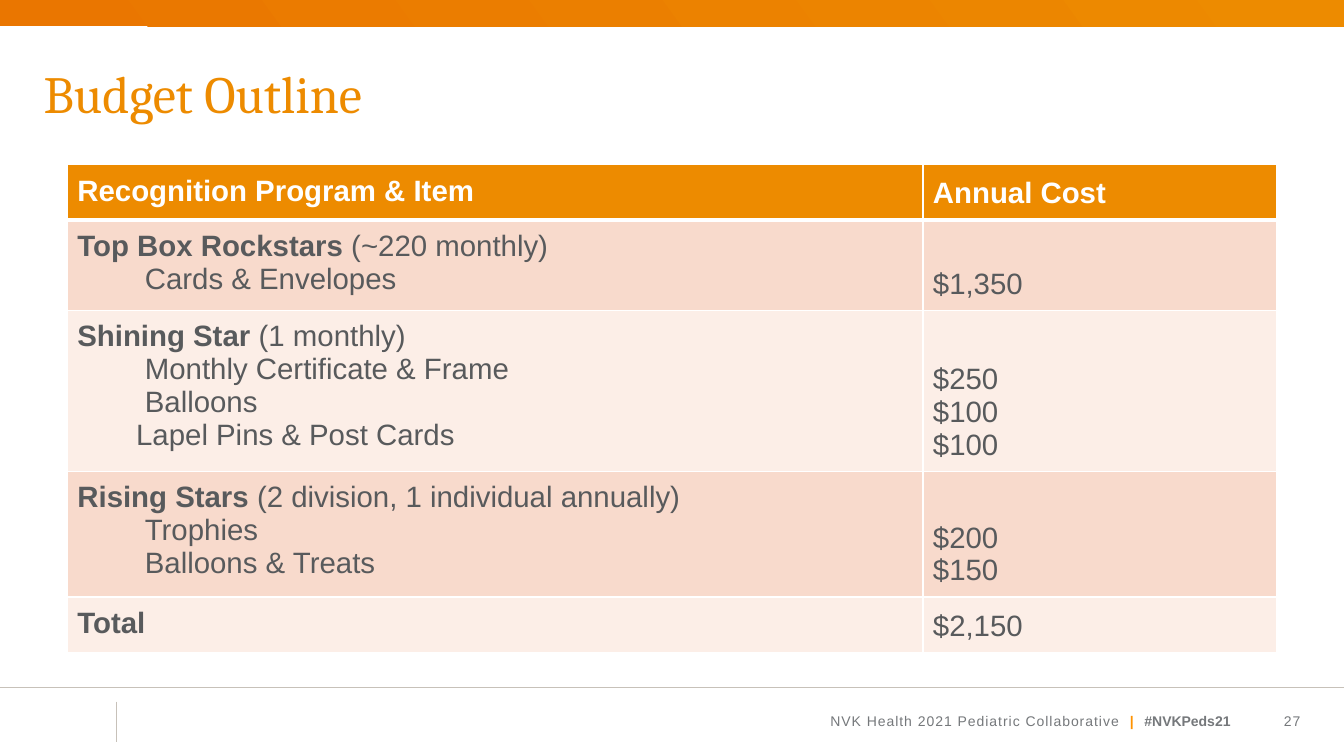
from pptx import Presentation
from pptx.dml.color import RGBColor
from pptx.enum.shapes import MSO_CONNECTOR as CONNECTOR, MSO_SHAPE as SHAPE
from pptx.enum.text import MSO_ANCHOR as ANCHOR, PP_ALIGN as ALIGN
from pptx.oxml.ns import qn
from pptx.util import Cm, Pt
from lxml.etree import SubElement

ORANGE = RGBColor(0xED, 0x8B, 0x00)
DEEP_ORANGE = RGBColor(0xEA, 0x76, 0x00)
BRIGHT_ORANGE = RGBColor(0xFF, 0x93, 0x00)
WHITE = RGBColor(0xFF, 0xFF, 0xFF)
DARK_GREY = RGBColor(0x58, 0x5A, 0x5C)
FOOTER_GREY = RGBColor(0x75, 0x78, 0x7B)
RULE_GREY = RGBColor(0xC7, 0xC1, 0xB9)
BANDS = (RGBColor(0xF8, 0xDA, 0xCC), RGBColor(0xFC, 0xEE, 0xE7))

TITLE = "Budget Outline"
HEADERS = ("Recognition Program & Item", "Annual Cost")
ITEM, PIN_ITEM = 1.7, 1.48
PROGRAMS = [
    ("Top Box Rockstars", " (~220 monthly)",
     [("Cards & Envelopes", "$1,350", ITEM)]),
    ("Shining Star ", "(1 monthly)",
     [("Monthly Certificate & Frame", "$250", ITEM),
      ("Balloons", "$100", ITEM),
      ("Lapel Pins & Post Cards", "$100", PIN_ITEM)]),
    ("Rising Stars ", "(2 division, 1 individual annually)",
     [("Trophies", "$200", ITEM),
      ("Balloons & Treats", "$150", ITEM)]),
]
TOTAL = ("Total", "$2,150")
FOOTER = [
    ("NVK Health 2021 Pediatric Collaborative  ", FOOTER_GREY, False, 70),
    ("|  ", BRIGHT_ORANGE, True, 70),
    ("#NVKPeds21\t\t", FOOTER_GREY, True, 0),
    ("27", FOOTER_GREY, False, 70),
]
COLUMNS = (21.56, 8.92)
LINE_HEIGHT, MARGIN = 0.83, 0.25


def add_run(p, text, size, color, bold=False, font="Arial"):
    r = p.add_run()
    r.text = text
    r.font.size, r.font.bold, r.font.name = Pt(size), bold, font
    r.font.color.rgb = color
    return r


def add_text_box(slide, left, top, width, height):
    tf = slide.shapes.add_textbox(Cm(left), Cm(top), Cm(width), Cm(height)).text_frame
    tf.word_wrap = True
    tf.vertical_anchor = ANCHOR.MIDDLE
    tf.margin_left = tf.margin_right = Cm(MARGIN)
    return tf


def add_rule(slide, x1, y1, x2, y2, width):
    line = slide.shapes.add_connector(CONNECTOR.STRAIGHT, Cm(x1), Cm(y1), Cm(x2), Cm(y2))
    line.line.color.rgb, line.line.width = RULE_GREY, Pt(width)
    SubElement(line._element.spPr, qn("a:effectLst"))


def set_borders(cell, top, bottom):
    tc_pr = cell._tc.get_or_add_tcPr()
    sides = (("L", 1), ("R", 1), ("T", top), ("B", bottom))
    for i, (side, width) in enumerate(sides):
        ln = SubElement(tc_pr, qn(f"a:ln{side}"), w=str(Pt(width)))
        SubElement(SubElement(ln, qn("a:solidFill")), qn("a:srgbClr"), val=str(WHITE))
        tc_pr.insert(i, ln)


def write_cell(cell, lines):
    tf = cell.text_frame
    for i, (indent, runs) in enumerate(lines):
        p = tf.paragraphs[0] if i == 0 else tf.add_paragraph()
        if indent:
            p.level = 1
            p_pr = p._p.get_or_add_pPr()
            p_pr.set("marL", str(Cm(indent)))
            p_pr.set("indent", "0")
        for text, bold, color in runs:
            add_run(p, text, 21, color, bold)


def build_rows():
    yield [[(0, [(h, True, WHITE)])] for h in HEADERS]
    for name, note, items in PROGRAMS:
        labels = [(0, [(name, True, DARK_GREY), (note, False, DARK_GREY)])]
        labels += [(indent, [(item, False, DARK_GREY)]) for item, _, indent in items]
        yield labels, [(0, [(cost, False, DARK_GREY)]) for _, cost, _ in items]
    yield [[(0, [(text, i == 0, DARK_GREY)])] for i, text in enumerate(TOTAL)]


def add_budget_table(slide):
    rows = list(build_rows())
    heights = [len(labels) * LINE_HEIGHT + 2 * MARGIN for labels, _ in rows]
    table = slide.shapes.add_table(len(rows), len(COLUMNS), Cm(1.7), Cm(4.15),
                                   Cm(sum(COLUMNS)), Cm(sum(heights))).table
    for column, width in zip(table.columns, COLUMNS):
        column.width = Cm(width)
    for i, (row, height) in enumerate(zip(rows, heights)):
        table.rows[i].height = Cm(height)
        for j, lines in enumerate(row):
            cell = table.cell(i, j)
            cell.margin_left = cell.margin_right = Cm(MARGIN)
            cell.margin_top = cell.margin_bottom = Cm(MARGIN)
            cell.vertical_anchor = ANCHOR.BOTTOM if j else ANCHOR.TOP
            cell.fill.solid()
            cell.fill.fore_color.rgb = BANDS[(i - 1) % 2] if i else ORANGE
            set_borders(cell, 3 if i == 1 else 1, 1 if i else 3)
            write_cell(cell, lines)


def add_top_bar(slide):
    sp = slide.shapes.add_shape(SHAPE.RECTANGLE, 0, 0, Cm(33.87), Cm(0.66))
    sp.shadow.inherit = False
    sp.line.fill.background()
    sp.fill.gradient()
    sp.fill.gradient_angle = 36
    for stop, color, position in zip(sp.fill.gradient_stops,
                                     (DEEP_ORANGE, ORANGE), (0.01, 0.99)):
        stop.color.rgb, stop.position = color, position


def add_footer(slide):
    p = add_text_box(slide, 11.07, 17.3, 21.95, 1.75).paragraphs[0]
    p.alignment = ALIGN.RIGHT
    for text, color, bold, spacing in FOOTER:
        r = add_run(p, text, 10, color, bold)
        r._r.get_or_add_rPr().set("spc", str(spacing))


def main():
    prs = Presentation()
    prs.slide_width, prs.slide_height = Cm(33.87), Cm(19.05)
    slide = prs.slides.add_slide(prs.slide_layouts[6])
    add_rule(slide, 33.87, 17.32, 0, 17.32, 0.75)
    add_footer(slide)
    add_rule(slide, 2.92, 17.68, 2.92, 18.69, 0.5)
    add_top_bar(slide)
    add_budget_table(slide)
    tf = add_text_box(slide, 0.85, 1.07, 32.17, 2.54)
    add_run(tf.paragraphs[0], TITLE, 37.3, ORANGE, font="Cambria")
    prs.save("out.pptx")


if __name__ == "__main__":
    main()
